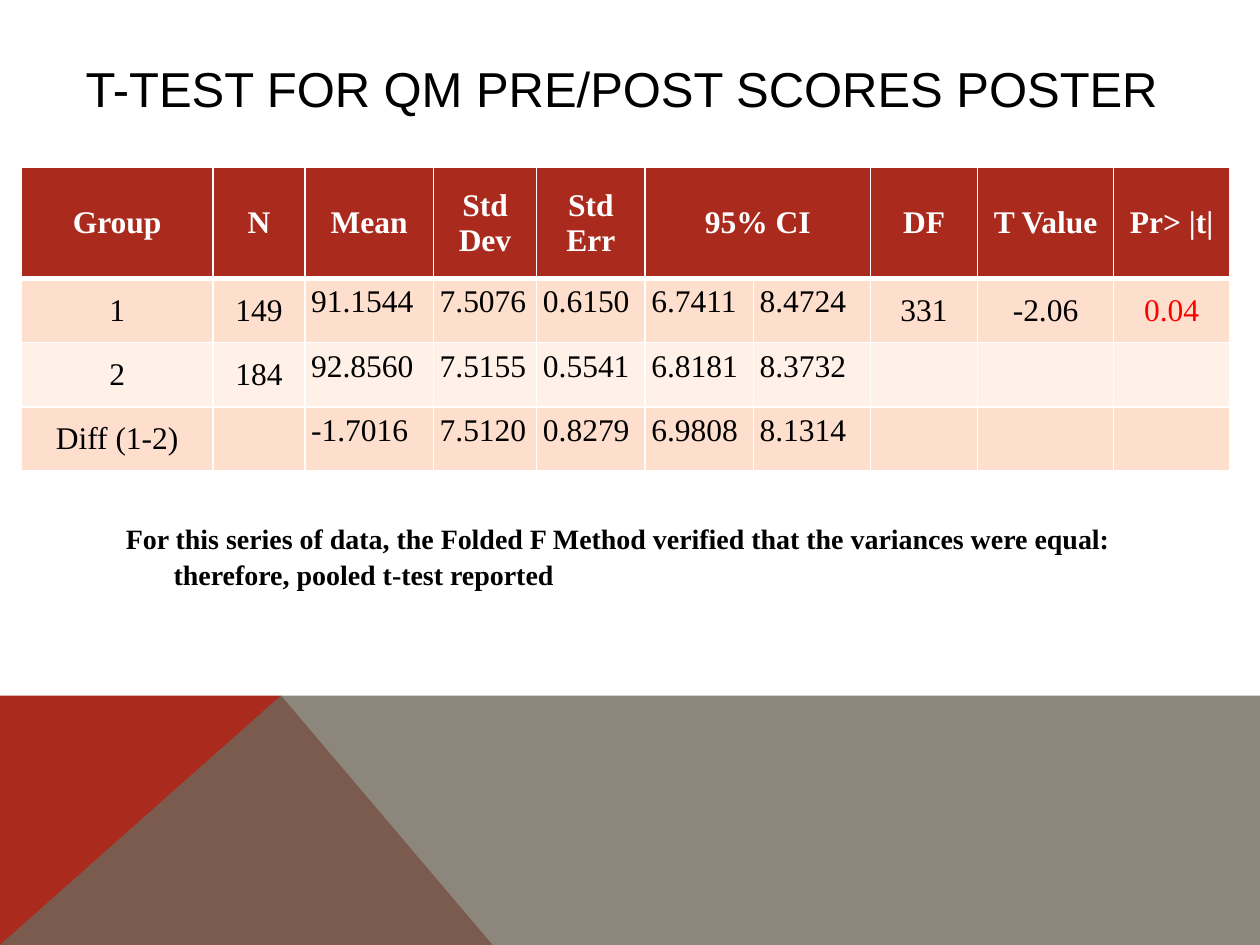
import lxml.etree
import pptx
import pptx.dml.color
import pptx.enum.text
import pptx.oxml
import pptx.oxml.ns
import pptx.util

Inches = pptx.util.Inches
Pt = pptx.util.Pt
RGBColor = pptx.dml.color.RGBColor
ALIGN = pptx.enum.text.PP_ALIGN
ANCHOR = pptx.enum.text.MSO_ANCHOR
qn = pptx.oxml.ns.qn

RED = RGBColor(0xAA, 0x2B, 0x1E)
TAUPE = RGBColor(0x71, 0x68, 0x5C)
PEACH = RGBColor(0xFE, 0xDF, 0xCD)
PALE = RGBColor(0xFF, 0xF0, 0xE8)
WHITE = RGBColor(0xFF, 0xFF, 0xFF)
BLACK = RGBColor(0, 0, 0)
ALERT = RGBColor(0xFF, 0, 0)

COLUMNS = [1.52, 0.73, 1.02, 0.82, 0.86, 0.86, 0.93, 0.85, 1.08, 0.92]
HEIGHTS = [0.88, 0.51, 0.51, 0.51]
ROWS = [
    ["Group", "N", "Mean", "Std Dev", "Std Err", "95% CI", "", "DF", "T Value", "Pr> |t|"],
    ["1", "149", "91.1544", "7.5076", "0.6150", "6.7411", "8.4724", "331", "-2.06", "0.04"],
    ["2", "184", "92.8560", "7.5155", "0.5541", "6.8181", "8.3732", "", "", ""],
    ["Diff (1-2)", "", "-1.7016", "7.5120", "0.8279", "6.9808", "8.1314", "", "", ""],
]
ESTIMATES = range(2, 7)


class Deck:
    """Holds the style and the current slide, and adds each kind of element."""

    heading_font = "Arial"
    body_font = "Times New Roman"

    def __init__(self, prs):
        self.s = prs.slides.add_slide(prs.slide_layouts[5])

    def style(self, p, font, size, color, bold=False, align=ALIGN.LEFT):
        p.alignment = align
        for r in p.runs:
            r.font.name = font
            r.font.size = Pt(size)
            r.font.color.rgb = color
            r.font.bold = bold

    def polygon(self, points, color, alpha=100):
        corners = [(Inches(x), Inches(y)) for x, y in points]
        builder = self.s.shapes.build_freeform(*corners[0], scale=1.0)
        builder.add_line_segments(corners[1:], close=True)
        sp = builder.convert_to_shape()
        sp.shadow.inherit = False
        sp.line.fill.background()
        sp.fill.solid()
        sp.fill.fore_color.rgb = color
        if alpha < 100:
            clr = sp.fill._xPr.find(qn("a:solidFill"))[0]
            lxml.etree.SubElement(clr, qn("a:alpha"), val=str(alpha * 1000))

    def title(self, text, left, top, width, height):
        sp = self.s.shapes.title
        sp.left, sp.top = Inches(left), Inches(top)
        sp.width, sp.height = Inches(width), Inches(height)
        tf = sp.text_frame
        tf.text = text
        tf.vertical_anchor = ANCHOR.MIDDLE
        self.style(tf.paragraphs[0], self.heading_font, 28, BLACK)

    def note(self, text, left, top, width, height):
        sp = self.s.shapes.add_textbox(Inches(left), Inches(top), Inches(width), Inches(height))
        tf = sp.text_frame
        tf.word_wrap = True
        tf.text = text
        p = tf.paragraphs[0]
        p.space_before = Pt(8)
        p.line_spacing = 1.05
        pPr = p._p.get_or_add_pPr()
        pPr.set("marL", str(Inches(0.38)))
        pPr.set("indent", str(-Inches(0.38)))
        self.style(p, self.body_font, 16, BLACK, bold=True)

    def borders(self, cell, top, bottom):
        tcPr = cell._tc.get_or_add_tcPr()
        for side, width in (("L", 1), ("R", 1), ("T", top), ("B", bottom)):
            ln = lxml.etree.SubElement(tcPr, qn("a:ln" + side), w=str(Pt(width)))
            fill = lxml.etree.SubElement(ln, qn("a:solidFill"))
            lxml.etree.SubElement(fill, qn("a:srgbClr"), val=str(WHITE))

    def cell(self, cell, text, row, col):
        header = row == 0
        self.borders(cell, 3 if row == 1 else 1, 3 if header else 1)
        cell.fill.solid()
        cell.fill.fore_color.rgb = RED if header else PEACH if row % 2 else PALE
        cell.text = text
        p = cell.text_frame.paragraphs[0]
        if col in ESTIMATES and not header:
            cell.margin_left = cell.margin_right = Inches(0.05)
            cell.margin_top = cell.margin_bottom = Inches(0.05)
            align = ALIGN.LEFT
        else:
            cell.vertical_anchor = ANCHOR.MIDDLE
            align = ALIGN.CENTER
        significant = row == 1 and col == len(COLUMNS) - 1
        color = WHITE if header else ALERT if significant else BLACK
        self.style(p, self.body_font, 18, color, header, align)

    def table(self, rows, left, top):
        frame = self.s.shapes.add_table(
            len(rows), len(COLUMNS), Inches(left), Inches(top),
            Inches(sum(COLUMNS)), Inches(sum(HEIGHTS)))
        table = frame.table
        for column, width in zip(table.columns, COLUMNS):
            column.width = Inches(width)
        for row, height in zip(table.rows, HEIGHTS):
            row.height = Inches(height)
        for i, values in enumerate(rows):
            for j, text in enumerate(values):
                self.cell(table.cell(i, j), text, i, j)
        table.cell(0, 5).merge(table.cell(0, 6))


def main():
    prs = pptx.Presentation()
    prs.slide_width, prs.slide_height = Inches(10), Inches(7.5)
    deck = Deck(prs)
    deck.polygon([(0, 7.5), (0, 5.52), (2.23, 5.52), (3.91, 7.5)], RED)
    deck.polygon([(0, 7.5), (2.23, 5.52), (10, 5.52), (10, 7.5)], TAUPE, alpha=80)
    deck.title("T-TEST FOR QM PRE/POST SCORES POSTER", 0.58, 0.4, 8.75, 0.6)
    deck.note("For this series of data, the Folded F Method verified that the variances "
              "were equal: therefore, pooled t-test reported", 0.9, 4.08, 8.22, 1.04)
    deck.table(ROWS, 0.17, 1.33)
    prs.save("out.pptx")


if __name__ == "__main__":
    main()
